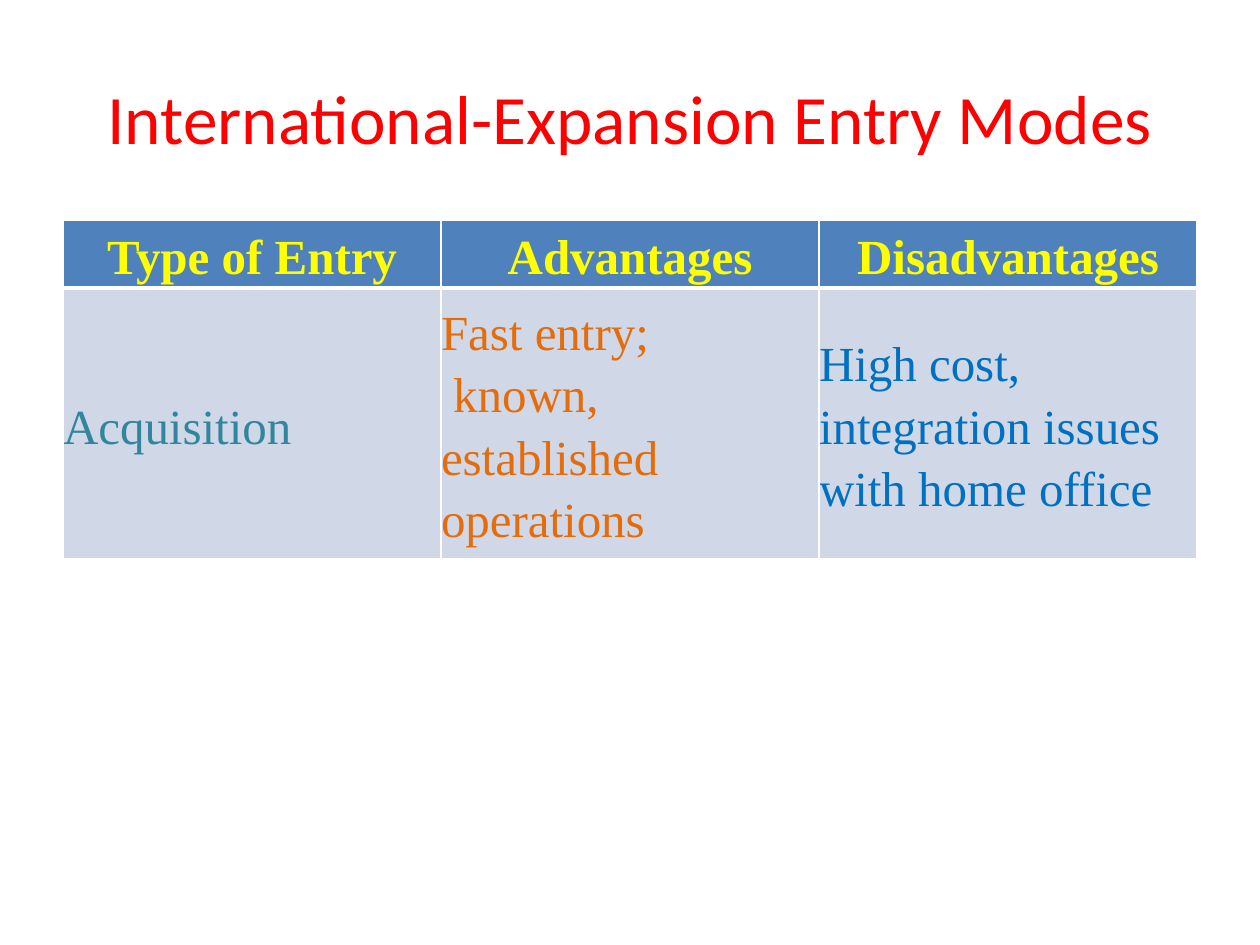
import pptx
import pptx.util
import pptx.dml.color
import pptx.enum.text
import pptx.oxml
import pptx.oxml.ns
from lxml import etree

RGBColor = pptx.dml.color.RGBColor
Align = pptx.enum.text.PP_ALIGN
MIDDLE = pptx.enum.text.MSO_ANCHOR.MIDDLE
Inches = pptx.util.Inches

RED = RGBColor(0xFF, 0x00, 0x00)
YELLOW = RGBColor(0xFF, 0xFF, 0x00)
TEAL = RGBColor(0x31, 0x85, 0x9C)
ORANGE = RGBColor(0xE4, 0x6C, 0x0A)
BLUE = RGBColor(0x00, 0x70, 0xC0)
HEADER_FILL = RGBColor(0x4F, 0x81, 0xBD)
BODY_FILL = RGBColor(0xD0, 0xD8, 0xE8)
WHITE = RGBColor(0xFF, 0xFF, 0xFF)

SLIDE_WIDTH, SLIDE_HEIGHT = Inches(10), Inches(7.5)
MARGIN = int(SLIDE_WIDTH * 0.05)
CONTENT_WIDTH = SLIDE_WIDTH - 2 * MARGIN
ROW_HEIGHT = Inches(0.41)

HEADINGS = ["Type of Entry", "Advantages", "Disadvantages"]
ACQUISITION = [
    (["Acquisition"], TEAL),
    (["Fast entry;", " known, established operations"], ORANGE),
    (["High cost, integration issues with home office"], BLUE),
]


def write(frame, lines, *, font, size, color, bold=False, align=Align.LEFT, spacing=1.0):
    """Fill a text frame with one paragraph per line."""
    frame.word_wrap = True
    for index, line in enumerate(lines):
        paragraph = frame.add_paragraph() if index else frame.paragraphs[0]
        paragraph.alignment = align
        paragraph.line_spacing = spacing
        run = paragraph.add_run()
        run.text = line
        run.font.name = font
        run.font.size = pptx.util.Pt(size)
        run.font.bold = bold
        run.font.color.rgb = color


def set_borders(cell, **widths):
    """Draw white borders; widths in points, keyed by side in schema order."""
    properties = cell._tc.get_or_add_tcPr()
    for position, (side, width) in enumerate(widths.items()):
        line = etree.Element(pptx.oxml.ns.qn(f"a:ln{side}"), w=str(pptx.util.Pt(width)))
        fill = etree.SubElement(line, pptx.oxml.ns.qn("a:solidFill"))
        etree.SubElement(fill, pptx.oxml.ns.qn("a:srgbClr"), val=str(WHITE))
        properties.insert(position, line)


def fill_cell(cell, lines, *, fill, top, bottom, **text_format):
    cell.margin_left = cell.margin_right = cell.margin_top = cell.margin_bottom = 0
    cell.vertical_anchor = MIDDLE
    cell.fill.solid()
    cell.fill.fore_color.rgb = fill
    write(cell.text_frame, lines, font="Times New Roman", size=28, spacing=1.15, **text_format)
    set_borders(cell, L=1, R=1, T=top, B=bottom)


def add_title(slide, title):
    box = slide.shapes.add_textbox(MARGIN, Inches(0.3), CONTENT_WIDTH, Inches(1.25))
    box.text_frame.vertical_anchor = MIDDLE
    write(box.text_frame, [title], font="Calibri", size=39.6, color=RED, align=Align.CENTER)


def add_entry_modes(slide):
    table = slide.shapes.add_table(
        2, len(HEADINGS), MARGIN, Inches(1.75), CONTENT_WIDTH, 2 * ROW_HEIGHT
    ).table
    for column, heading in enumerate(HEADINGS):
        fill_cell(table.cell(0, column), [heading], fill=HEADER_FILL, top=1, bottom=3,
                  color=YELLOW, bold=True, align=Align.CENTER)
    for column, (lines, color) in enumerate(ACQUISITION):
        fill_cell(table.cell(1, column), lines, fill=BODY_FILL, top=3, bottom=1, color=color)


def main():
    deck = pptx.Presentation()
    deck.slide_width, deck.slide_height = SLIDE_WIDTH, SLIDE_HEIGHT
    slide = deck.slides.add_slide(deck.slide_layouts[6])
    add_title(slide, "International-Expansion Entry Modes")
    add_entry_modes(slide)
    deck.save("out.pptx")


if __name__ == "__main__":
    main()
